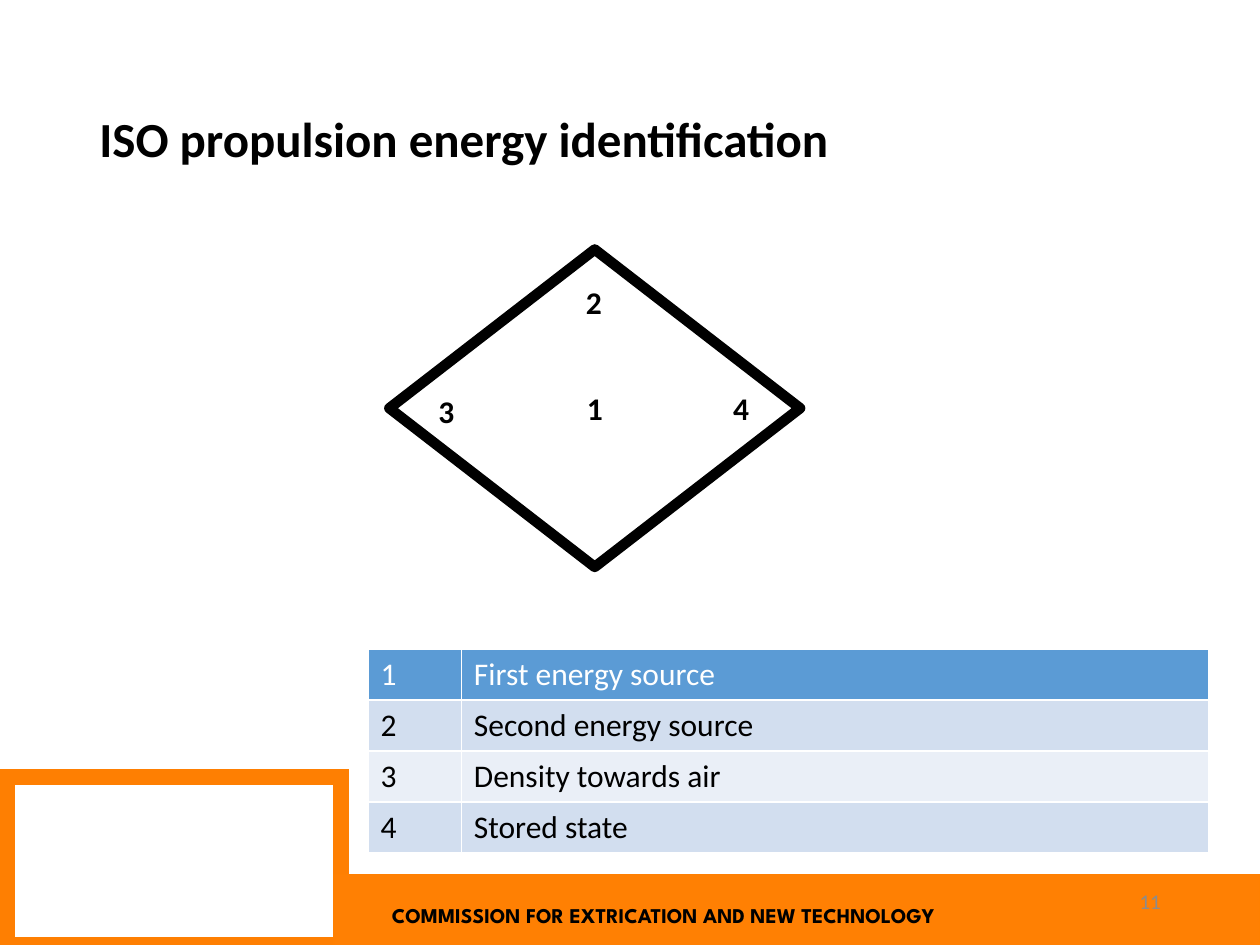
import dataclasses

import lxml.etree
import pptx
import pptx.dml.color
import pptx.enum.shapes
import pptx.enum.text
import pptx.oxml.ns
import pptx.util

Cm = pptx.util.Cm
Pt = pptx.util.Pt
Shape = pptx.enum.shapes.MSO_SHAPE
Align = pptx.enum.text.PP_ALIGN
Anchor = pptx.enum.text.MSO_ANCHOR
qn = pptx.oxml.ns.qn


@dataclasses.dataclass(frozen=True)
class Theme:
    font: str = "Calibri"
    footer_font: str = "League Spartan"
    title_size: int = 28
    text_size: int = 18
    footer_size: int = 12
    black: str = "000000"
    white: str = "FFFFFF"
    grey: str = "8C8C8C"
    frame: str = "FE7F02"
    banner: str = "FF8003"
    banner_edge: str = "FF8001"
    header: str = "5B9BD5"
    bands: tuple = ("D2DEEF", "EAEFF7")


def rgb(value):
    return pptx.dml.color.RGBColor.from_string(value)


class PageBuilder:
    def __init__(self, deck, theme):
        self.theme = theme
        self.page = deck.slides.add_slide(deck.slide_layouts[5])

    def span(self, para, text, size, color, bold=False, font=None):
        span = para.add_run()
        span.text = text
        span.font.name = font or self.theme.font
        span.font.size = Pt(size)
        span.font.bold = bold
        span.font.color.rgb = rgb(color)

    def title(self, text, place):
        box = self.page.shapes.title
        box.left, box.top, box.width, box.height = map(Cm, place)
        box.text_frame.vertical_anchor = Anchor.MIDDLE
        para = box.text_frame.paragraphs[0]
        para.alignment = Align.LEFT
        para.line_spacing = 0.9
        self.span(para, text, self.theme.title_size, self.theme.black, True)

    def shape(self, kind, place, fill, line, width, join):
        shape = self.page.shapes.add_shape(kind, *map(Cm, place))
        shape.shadow.inherit = False
        shape.fill.solid()
        shape.fill.fore_color.rgb = rgb(fill)
        shape.line.color.rgb = rgb(line)
        shape.line.width = Pt(width)
        outline = shape.element.spPr.find(qn("a:ln"))
        lxml.etree.SubElement(outline, qn(f"a:{join}"))

    def text(self, text, place, size, color, bold=False, font=None,
             align=Align.LEFT, anchor=Anchor.TOP):
        box = self.page.shapes.add_textbox(*map(Cm, place))
        box.text_frame.word_wrap = True
        box.text_frame.vertical_anchor = anchor
        para = box.text_frame.paragraphs[0]
        para.alignment = align
        self.span(para, text, size, color, bold, font)

    def border(self, cell):
        properties = cell._tc.get_or_add_tcPr()
        for side in ("lnL", "lnR", "lnT", "lnB"):
            line = lxml.etree.SubElement(properties, qn(f"a:{side}"), w=str(Pt(1)))
            fill = lxml.etree.SubElement(line, qn("a:solidFill"))
            lxml.etree.SubElement(fill, qn("a:srgbClr"), val=self.theme.white)

    def table(self, entries, left, top, widths, row_height):
        theme = self.theme
        table = self.page.shapes.add_table(
            len(entries), len(widths), Cm(left), Cm(top),
            Cm(sum(widths)), Cm(row_height * len(entries))).table
        for column, width in zip(table.columns, widths):
            column.width = Cm(width)
        for index, entry in enumerate(entries):
            fill = theme.bands[(index - 1) % 2] if index else theme.header
            color = theme.black if index else theme.white
            for cell, text in zip(table.rows[index].cells, entry):
                self.border(cell)
                cell.fill.solid()
                cell.fill.fore_color.rgb = rgb(fill)
                self.span(cell.text_frame.paragraphs[0], text, theme.text_size, color)


def main():
    deck = pptx.Presentation()
    deck.slide_width, deck.slide_height = Cm(25.4), Cm(19.05)
    theme = Theme()
    builder = PageBuilder(deck, theme)

    builder.shape(Shape.RECTANGLE, (0.15, 15.67, 6.73, 3.38),
                  theme.white, theme.frame, 9.25, "miter")
    builder.shape(Shape.RECTANGLE, (6.73, 17.63, 18.67, 1.57),
                  theme.banner, theme.banner_edge, 1, "miter")
    builder.text("COMMISSION FOR EXTRICATION AND NEW TECHNOLOGY",
                 (7.65, 18.06, 13.59, 0.76), theme.footer_size, theme.black,
                 bold=True, font=theme.footer_font)
    builder.text("11", (17.93, 17.65, 5.72, 1.02), theme.footer_size, theme.grey,
                 align=Align.RIGHT, anchor=Anchor.MIDDLE)

    builder.shape(Shape.FLOWCHART_DECISION, (7.85, 5.03, 8.28, 6.4),
                  theme.white, theme.black, 6, "round")
    label_places = {"1": (11.58, 7.72), "2": (11.56, 5.59),
                    "3": (8.59, 7.77), "4": (14.53, 7.72)}
    for label, (left, top) in label_places.items():
        builder.text(label, (left, top, 0.89, 1.02), theme.text_size, theme.black, bold=True)

    meanings = ("First energy source", "Second energy source",
                "Density towards air", "Stored state")
    builder.table(list(zip(label_places, meanings)), 7.42, 13.08, (1.88, 15.06), 1.03)
    builder.title("ISO propulsion energy identification", (1.75, 1.02, 21.89, 3.68))
    deck.save("out.pptx")


if __name__ == "__main__":
    main()
